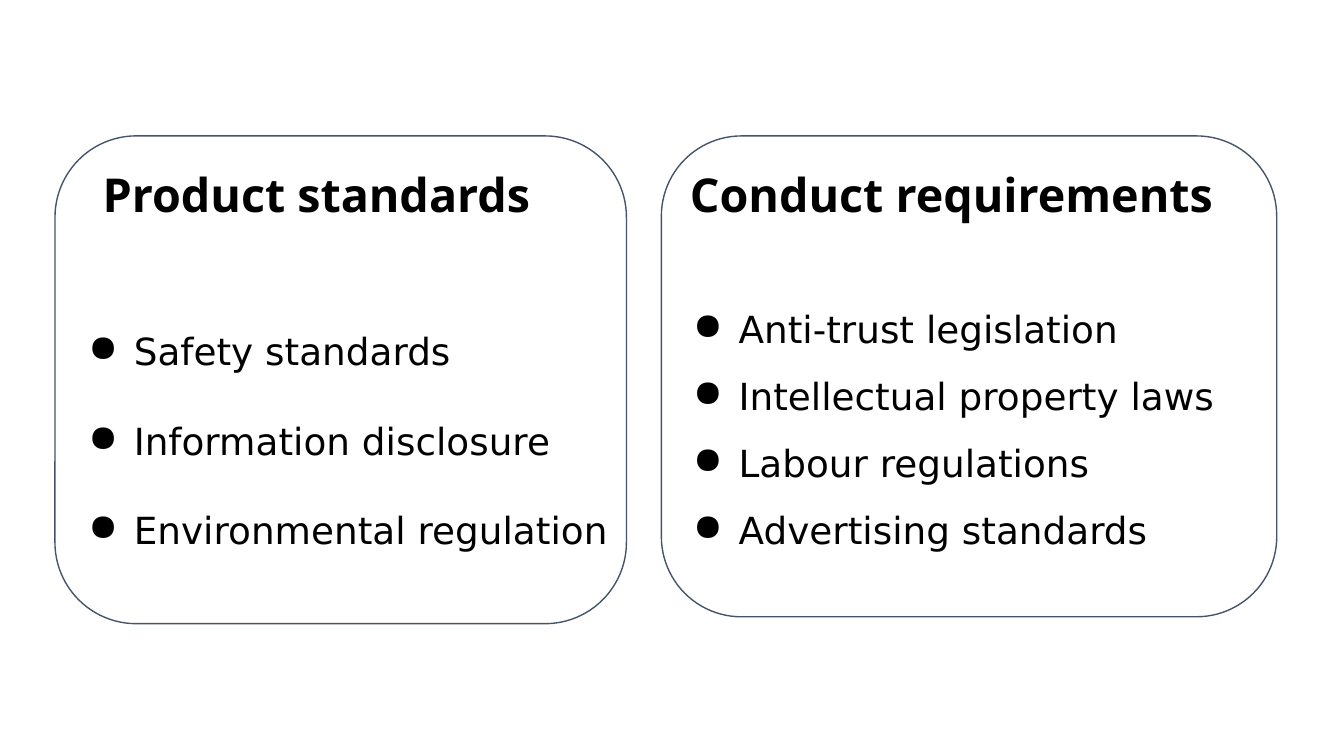
from lxml import etree
from pptx import Presentation
from pptx import util as u
from pptx.dml import color
from pptx.enum import shapes, text
from pptx.oxml import ns

INK, EDGE = "000000", "44546A"
TOP, HEAD, LIST = 2.57, 1.73, 5.26
CARDS = [
    dict(title="Product standards", gap=2,
         items=["Safety standards", "Information disclosure",
                "Environmental regulation"],
         card=(1.04, 10.8, 9.22), head=(1.75, 10.74), list=(1.07, 10.74, 7.72)),
    dict(title="Conduct requirements", gap=1.5,
         items=["Anti-trust legislation", "Intellectual property laws",
                "Labour regulations", "Advertising standards"],
         card=(12.5, 11.63, 9.09), head=(12.85, 12.27), list=(12.5, 11.63, 8.05)),
]


def tint(code):
    return color.RGBColor.from_string(code)


def add_card(page, left, top, wide, high):
    card = page.shapes.add_shape(
        shapes.MSO_SHAPE.ROUNDED_RECTANGLE, *map(u.Cm, (left, top, wide, high)))
    card.shadow.inherit = False
    card.fill.background()
    card.line.color.rgb = tint(EDGE)
    card.line.width = u.Pt(0.75)


def add_text(page, area, lines, face, size, gap, bold=False, dots=False):
    box = page.shapes.add_textbox(*map(u.Cm, area))
    frame = box.text_frame
    frame.word_wrap = True
    frame.margin_left = frame.margin_right = u.Cm(0.19)
    frame.margin_top = frame.margin_bottom = u.Cm(0.1)
    frame.vertical_anchor = text.MSO_ANCHOR.TOP if dots else text.MSO_ANCHOR.BOTTOM
    frame.text = "\n".join(lines)
    for para in frame.paragraphs:
        para.line_spacing = gap
        if dots:
            add_dot(para)
        for run in para.runs:
            run.font.name = face
            run.font.size = u.Pt(size)
            run.font.bold = bold
            run.font.color.rgb = tint(INK)


def add_dot(para):
    props = para._p.get_or_add_pPr()
    props.set("marL", str(u.Cm(1.27)))
    props.set("indent", str(u.Cm(-0.86)))
    shade = etree.SubElement(props, ns.qn("a:buClr"))
    etree.SubElement(shade, ns.qn("a:srgbClr"), val=INK)
    etree.SubElement(props, ns.qn("a:buChar"), char="●")


def main():
    deck = Presentation()
    deck.slide_width, deck.slide_height = u.Cm(25.4), u.Cm(14.29)
    page = deck.slides.add_slide(deck.slide_layouts[6])
    for item in CARDS:
        left, wide, high = item["card"]
        add_card(page, left, TOP, wide, high)
        left, wide = item["head"]
        add_text(page, (left, TOP, wide, HEAD), [item["title"]],
                 "Noto Sans", 25, 0.9, bold=True)
        left, wide, high = item["list"]
        add_text(page, (left, LIST, wide, high), item["items"],
                 "DejaVu Sans", 20, item["gap"], dots=True)
    deck.save("out.pptx")


if __name__ == "__main__":
    main()
